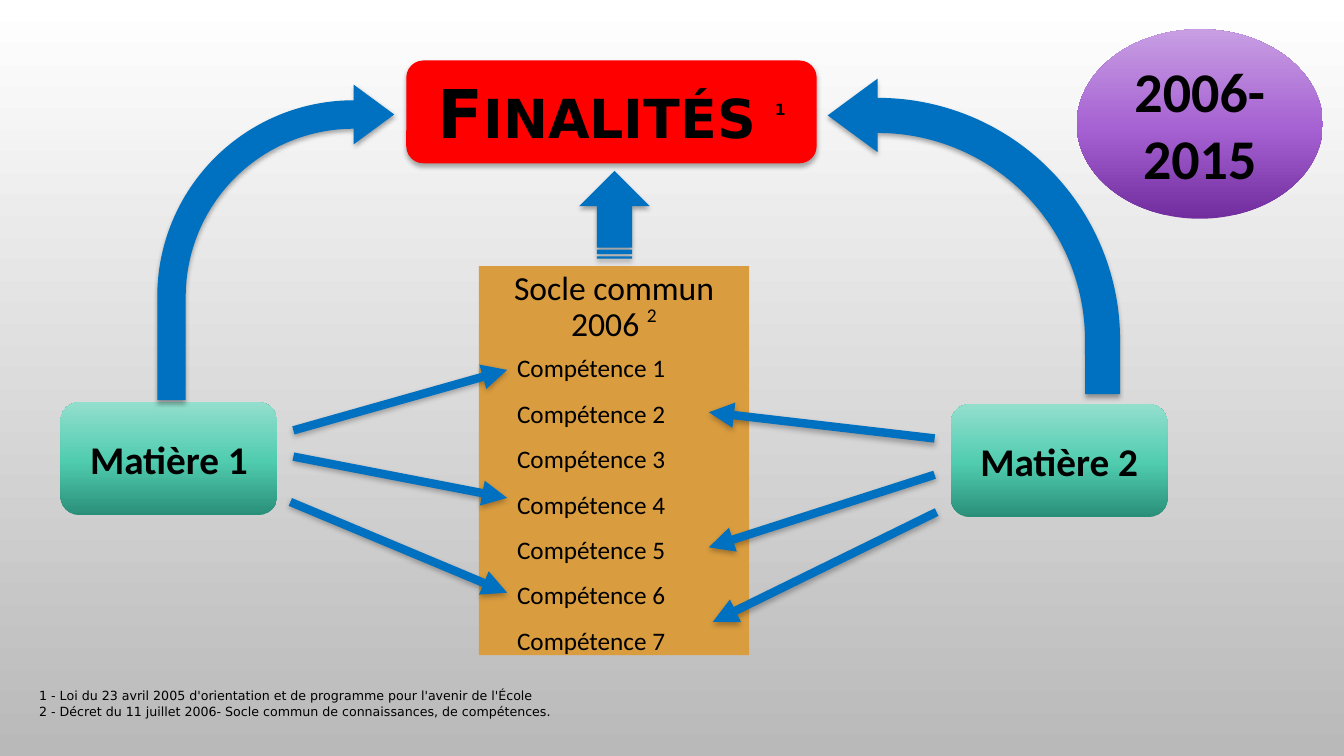
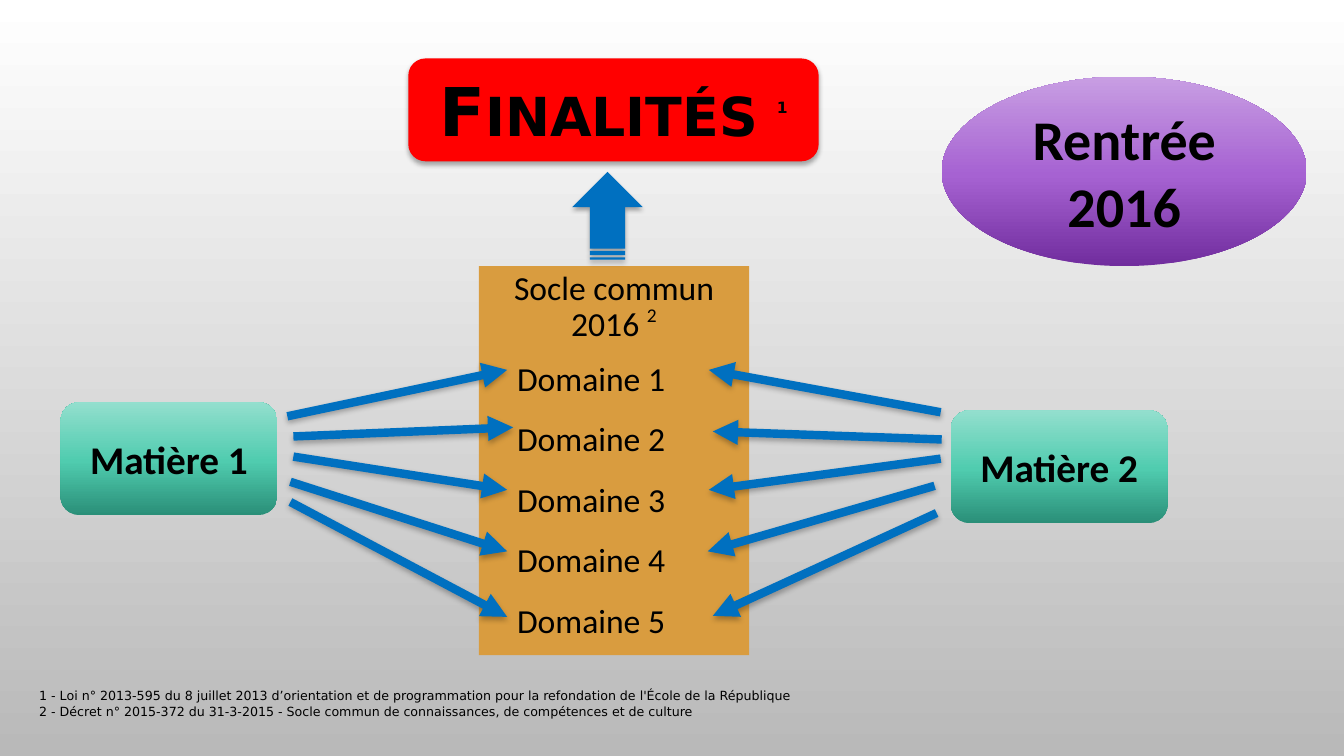
import copy
import typing
from dataclasses import dataclass

import lxml.etree
import pptx
import pptx.dml.color
import pptx.enum.dml
import pptx.enum.shapes
import pptx.enum.text
import pptx.oxml.ns
import pptx.util

Inches = pptx.util.Inches
Pt = pptx.util.Pt
qn = pptx.oxml.ns.qn
KIND = pptx.enum.shapes.MSO_SHAPE
ALIGN = pptx.enum.text.PP_ALIGN
FIT = pptx.enum.text.MSO_AUTO_SIZE.SHAPE_TO_FIT_TEXT

COLORS = {
    "text": "000000",
    "aim": "FF0000",
    "base": "D99C3F",
    "arrow": "0070C0",
}
GREEN = [(0, "2A8F78"), (0.48, "50CCAF"), (1, "93DFCE")]
PURPLE = [(0, "712D9E"), (0.48, "A662D2"), (1, "C89EE3")]
GRAY = [(0, "FFFFFF"), (1, "B9B9B9")]
BODY = "Calibri"
PLAIN = "DejaVu Sans"

Box = tuple[float, float, float, float]
Stops = list[tuple[float, str]]


@dataclass
class Run:
    text: str
    size: float
    font: str = BODY
    bold: bool = False
    caps: bool = False
    rise: int = 0


@dataclass
class Shade:
    alpha: int
    blur: float
    dist: float


@dataclass
class Line:
    start: tuple[float, float]
    end: tuple[float, float]


@dataclass
class Bend:
    box: Box
    flip: bool = False


@dataclass
class Page:
    title: str
    oval: Box
    year: str
    aim: tuple[float, float]
    up: tuple[float, float]
    right_top: float
    items: list[str]
    size: float
    list_box: Box
    notes: list[str]
    note_width: float
    lines: list[Line]
    bends: list[Bend]


SOFT = Shade(32, 3.5, 2.2)
WIDE = Shade(28, 4, 2)

PAGES = [
    Page(
        title="2006- 2015", oval=(10.68, 0.29, 2.44, 1.88), year="2006",
        aim=(4.03, 0.6), up=(5.66, 1.78), right_top=4.01,
        items=[f"Compétence {n}" for n in range(1, 8)],
        size=18, list_box=(5.03, 3.3, 1.69, 3.28),
        notes=[
            "1 - Loi du 23 avril 2005 d'orientation et de programme pour l'avenir de l'École",
            "2 - Décret du 11 juillet 2006- Socle commun de connaissances, de compétences.",
        ],
        note_width=5.38,
        lines=[
            Line((2.91, 4.27), (5.03, 3.67)),
            Line((2.91, 4.53), (5.03, 4.94)),
            Line((2.88, 4.98), (5.03, 5.88)),
            Line((9.27, 4.35), (7.03, 4.09)),
            Line((9.27, 4.71), (7.03, 5.43)),
            Line((9.29, 5.08), (7.07, 6.17)),
        ],
        bends=[Bend((1.56, 0.84, 2.35, 3.13)), Bend((8.21, 0.78, 2.9, 3.13), True)],
    ),
    Page(
        title="Rentrée 2016", oval=(9.34, 0.76, 3.62, 1.88), year="2016",
        aim=(4.05, 0.58), up=(5.59, 1.79), right_top=4.07,
        items=[f"Domaine {n}" for n in range(1, 6)],
        size=24, list_box=(5.03, 3.3, 1.68, 3.13),
        notes=[
            "1 - Loi n° 2013-595 du 8 juillet 2013 d’orientation et de programmation "
            "pour la refondation de l'École de la République",
            "2 - Décret n° 2015-372 du 31-3-2015 - Socle commun de connaissances, "
            "de compétences et de culture",
        ],
        note_width=7.81,
        lines=[
            Line((2.85, 4.13), (5.03, 3.67)),
            Line((2.91, 4.33), (5.09, 4.24)),
            Line((2.91, 4.53), (5.03, 4.86)),
            Line((2.88, 4.78), (5.03, 5.47)),
            Line((2.88, 4.98), (5.03, 6.12)),
            Line((9.33, 4.09), (7.03, 3.67)),
            Line((9.34, 4.36), (7.07, 4.28)),
            Line((9.33, 4.55), (7.03, 4.86)),
            Line((9.27, 4.82), (7.02, 5.47)),
            Line((9.29, 5.09), (7.07, 6.11)),
        ],
        bends=[],
    ),
]


def rgb(name: str) -> pptx.dml.color.RGBColor:
    return pptx.dml.color.RGBColor.from_string(COLORS.get(name, name))


def blend(fill: typing.Any, root: typing.Any, stops: Stops, angle: float) -> None:
    """Fill with a gradient; the angle runs counter-clockwise."""
    fill.gradient()
    fill.gradient_angle = angle
    marks = root.find(".//" + qn("a:gsLst"))
    while len(marks) < len(stops):
        marks.append(copy.deepcopy(marks[0]))
    for mark, (place, color) in zip(fill.gradient_stops, stops):
        mark.position = place
        mark.color.rgb = rgb(color)


def shade(root: typing.Any, look: Shade | None) -> None:
    """Replace the theme shadow by the given one, or by none."""
    props = root.spPr
    for old in props.findall(qn("a:effectLst")):
        props.remove(old)
    effects = lxml.etree.SubElement(props, qn("a:effectLst"))
    if look:
        drop = lxml.etree.SubElement(
            effects, qn("a:outerShdw"), blurRad=str(Pt(look.blur)),
            dist=str(Pt(look.dist)), dir="5400000", rotWithShape="0")
        color = lxml.etree.SubElement(drop, qn("a:srgbClr"), val=COLORS["text"])
        lxml.etree.SubElement(color, qn("a:alpha"), val=str(look.alpha * 1000))


def write(frame: typing.Any, paras: list[list[Run]], align: ALIGN = ALIGN.CENTER,
          space: float = 1) -> None:
    for index, runs in enumerate(paras):
        para = frame.add_paragraph() if index else frame.paragraphs[0]
        para.alignment = align
        para.line_spacing = space
        for item in runs:
            run = para.add_run()
            run.text = item.text
            run.font.size = Pt(item.size)
            run.font.name = item.font
            run.font.bold = item.bold
            run.font.color.rgb = rgb("text")
            props = run.font._element
            if item.caps:
                props.set("cap", "small")
            if item.rise:
                props.set("baseline", str(item.rise * 1000))


def draw(slide: typing.Any, kind: KIND, box: Box, fill: str | Stops,
         runs: list[Run] | None = None, look: Shade | None = None) -> typing.Any:
    shape = slide.shapes.add_shape(kind, *map(Inches, box))
    if isinstance(fill, str):
        shape.fill.solid()
        shape.fill.fore_color.rgb = rgb(fill)
    else:
        blend(shape.fill, shape.element, fill, 90)
    shape.line.fill.background()
    shape.shadow.inherit = False
    shade(shape.element, look)
    if runs:
        frame = shape.text_frame
        frame.word_wrap = True
        frame.vertical_anchor = pptx.enum.text.MSO_ANCHOR.MIDDLE
        write(frame, [runs])
    return shape


def label(slide: typing.Any, box: Box, rows: list[Run], space: float = 1) -> None:
    frame = slide.shapes.add_textbox(*map(Inches, box)).text_frame
    frame.word_wrap = False
    frame.auto_size = FIT
    write(frame, [[row] for row in rows], ALIGN.LEFT, space)


def link(slide: typing.Any, line: Line) -> None:
    arrow = slide.shapes.add_connector(
        pptx.enum.shapes.MSO_CONNECTOR.STRAIGHT,
        *map(Inches, (*line.start, *line.end)))
    arrow.line.color.rgb = rgb("arrow")
    arrow.line.width = Pt(6)
    lxml.etree.SubElement(arrow.line._get_or_add_ln(), qn("a:tailEnd"), type="triangle")
    shade(arrow._element, WIDE)


def curve(slide: typing.Any, bend: Bend) -> None:
    arrow = draw(slide, KIND.BENT_ARROW, bend.box, "arrow", look=SOFT)
    for index, value in enumerate((0.12, 0.126, 0.171, 0.829)):
        arrow.adjustments[index] = value
    if bend.flip:
        arrow.element.spPr.find(qn("a:xfrm")).set("flipH", "1")


def base(slide: typing.Any, page: Page) -> None:
    """Draw the common base with its list of items."""
    shape = draw(slide, KIND.RECTANGLE, (4.75, 2.64, 2.68, 3.86), "base")
    frame = shape.text_frame
    frame.word_wrap = True
    frame.auto_size = FIT
    frame.vertical_anchor = pptx.enum.text.MSO_ANCHOR.TOP
    write(frame, [[Run(f"Socle commun {page.year} ", 24), Run("2", 24, rise=44)]],
          space=0.9)
    label(slide, page.list_box, [Run(item, page.size) for item in page.items], 1.5)


def build(slide: typing.Any, page: Page) -> None:
    base(slide, page)
    draw(slide, KIND.ROUNDED_RECTANGLE, (*page.aim, 4.07, 1.02), "aim",
         [Run("Finalités ", 48, PLAIN, True, True),
          Run("1", 24, PLAIN, True, True, 70)], SOFT)
    for index, spot in enumerate([(0.6, 3.99), (9.43, page.right_top)], 1):
        draw(slide, KIND.ROUNDED_RECTANGLE, (*spot, 2.15, 1.12), GREEN,
             [Run(f"Matière {index}", 28, bold=True)])
    label(slide, (0.29, 6.78, page.note_width, 0.4),
          [Run(note, 9, PLAIN) for note in page.notes])
    draw(slide, KIND.STRIPED_RIGHT_ARROW, (*page.up, 0.87, 0.7), "arrow",
         look=SOFT).rotation = 270
    for line in page.lines:
        link(slide, line)
    for bend in page.bends:
        curve(slide, bend)
    draw(slide, KIND.OVAL, page.oval, PURPLE, [Run(page.title, 40, bold=True)])


def main() -> None:
    deck = pptx.Presentation()
    deck.slide_width = Inches(13.33)
    deck.slide_height = Inches(7.5)
    master = deck.slide_master
    blend(master.background.fill, master.element, GRAY, 270)
    for page in PAGES:
        build(deck.slides.add_slide(deck.slide_layouts[6]), page)
    deck.save("out.pptx")


if __name__ == "__main__":
    main()
